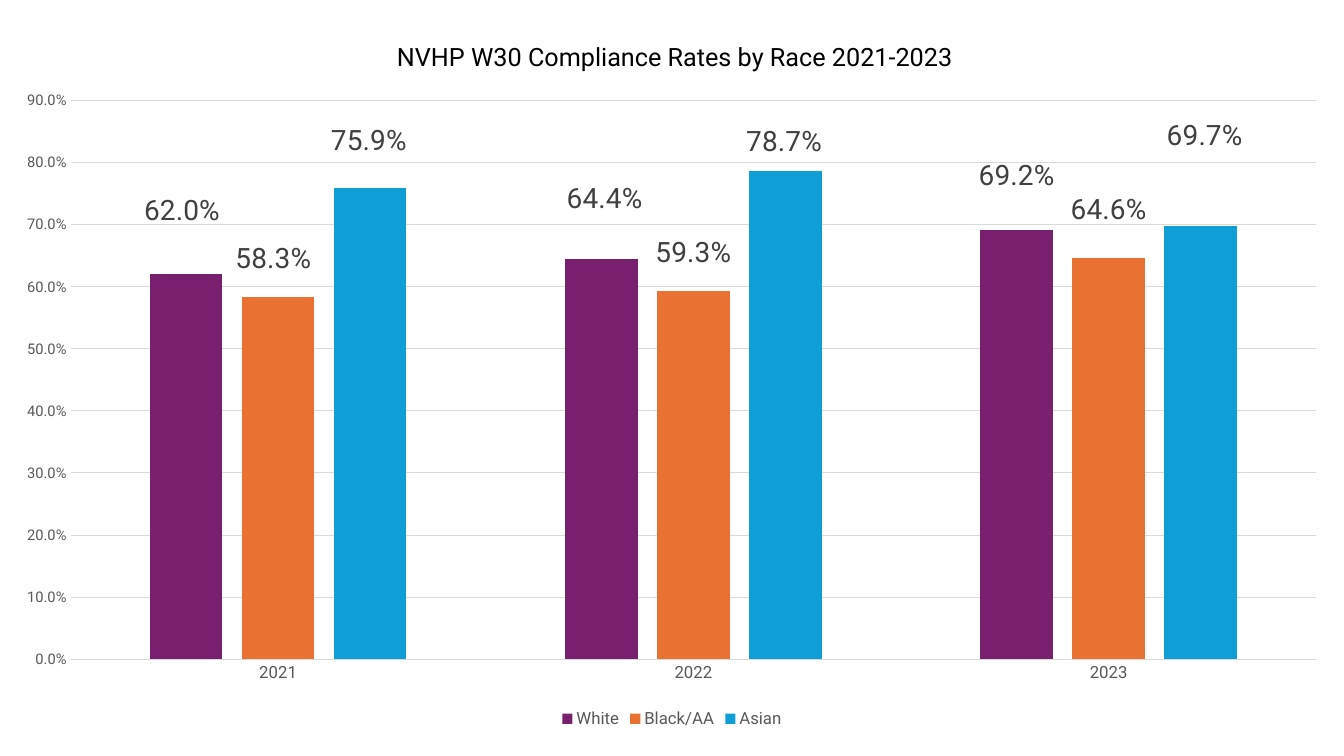
from pptx import Presentation
from pptx.chart.data import CategoryChartData
from pptx.dml.color import RGBColor
from pptx.enum.chart import (XL_CHART_TYPE, XL_LABEL_POSITION,
                             XL_LEGEND_POSITION, XL_TICK_MARK)
from pptx.oxml import parse_xml
from pptx.oxml.ns import nsdecls, qn
from pptx.util import Inches, Pt

# Content
TITLE = "NVHP W30 Compliance Rates by Race 2021-2023"
YEARS = ["2021", "2022", "2023"]
RATES = {
    "White": [0.62, 0.644, 0.692],
    "Black/AA": [0.583, 0.593, 0.646],
    "Asian": [0.759, 0.787, 0.697],
}
# Label shifts (right, down) in percent of the chart's size, one per year
LABEL_SHIFTS = {
    "White": [(-0.3, -6), (0.25, -5.6), (0, -4.6)],
    "Black/AA": [(-0.35, -2.4), (0, -2.4), (0, -3.8)],
    "Asian": [(-0.1, -3.7), (-0.1, -1.1), (0.3, -9.7)],
}
# Left, top, width, height in percent of the chart's size
PLOT_AREA = {"x": 5.25, "y": 11.4, "w": 92.7, "h": 78.3}
TITLE_AT = {"x": 29.2, "y": 2.3}

THEME = {
    "font": "Roboto",
    "series": {"White": "78206E", "Black/AA": "E97132", "Asian": "0F9ED5"},
    "grid": "D9D9D9",
    "format": "0.0%",
    "title": {"size": 18, "color": "000000", "bold": False},
    "axis": {"size": 10.5, "color": "595959"},
    "category": {"size": 12, "color": "595959"},
    "label": {"size": 20, "color": "404040"},
}


def style_font(font, role):
    values = {"name": THEME["font"], **THEME[role]}
    values["size"] = Pt(values["size"])
    font.color.rgb = RGBColor.from_string(values.pop("color"))
    for name, value in values.items():
        setattr(font, name, value)


def style_line(line):
    line.color.rgb = RGBColor.from_string(THEME["grid"])
    line.width = Pt(0.75)


def set_layout(parent, index, box, modes=""):
    """Place a chart part by hand; box holds percentages."""
    for old in parent.findall(qn("c:layout")):
        parent.remove(old)
    values = "".join(f'<c:{k} val="{v / 100:.4f}"/>' for k, v in box.items())
    parent.insert(index, parse_xml(
        f'<c:layout {nsdecls("c")}><c:manualLayout>{modes}{values}'
        '</c:manualLayout></c:layout>'))


def hide_leader_lines(labels):
    """Switch off the lines from moved labels to their columns."""
    for lines in labels.findall(qn("c:showLeaderLines")):
        lines.set("val", "0")
    labels.append(parse_xml(
        f'<c:extLst {nsdecls("c")}>'
        '<c:ext uri="{CE6537A1-D6FC-4f65-9D91-7224C49458BB}" xmlns:c15='
        '"http://schemas.microsoft.com/office/drawing/2012/chart">'
        '<c15:showLeaderLines val="0"/></c:ext></c:extLst>'))


EDGE = '<c:xMode val="edge"/><c:yMode val="edge"/>'
INNER = '<c:layoutTarget val="inner"/>' + EDGE

prs = Presentation()
prs.slide_width, prs.slide_height = Inches(13.33), Inches(7.5)
slide = prs.slides.add_slide(prs.slide_layouts[6])

# Chart
data = CategoryChartData(number_format=THEME["format"])
data.categories = YEARS
for name, rates in RATES.items():
    data.add_series(name, rates)
chart = slide.shapes.add_chart(
    XL_CHART_TYPE.COLUMN_CLUSTERED, Inches(0), Inches(0.19),
    Inches(13.33), Inches(7.08), data).chart
chart.font.name, chart.font.size = THEME["font"], Pt(10)

# Title
chart.has_title = True
tf = chart.chart_title.text_frame
tf.text = TITLE
style_font(tf.paragraphs[0].runs[0].font, "title")
set_layout(tf._txBody.getparent().getparent(), 1, TITLE_AT, EDGE)

# Legend
chart.has_legend = True
chart.legend.position = XL_LEGEND_POSITION.BOTTOM
chart.legend.include_in_layout = False
style_font(chart.legend.font, "category")

# Axes
for axis, role in ((chart.category_axis, "category"),
                   (chart.value_axis, "axis")):
    axis.major_tick_mark = axis.minor_tick_mark = XL_TICK_MARK.NONE
    style_font(axis.tick_labels.font, role)
style_line(chart.category_axis.format.line)
rate_axis = chart.value_axis
rate_axis.format.line.fill.background()
style_line(rate_axis.major_gridlines.format.line)
for name, value in {"minimum_scale": 0, "maximum_scale": 0.9,
                    "major_unit": 0.1}.items():
    setattr(rate_axis, name, value)
rate_axis.tick_labels.number_format = THEME["format"]
rate_axis.tick_labels.number_format_is_linked = False

# Columns and their labels
plot = chart.plots[0]
plot.gap_width, plot.overlap, plot.vary_by_categories = 219, -27, False
set_layout(plot._element.getparent(), 0, PLOT_AREA, INNER)
for series in plot.series:
    fill = series.format.fill
    fill.solid()
    fill.fore_color.rgb = RGBColor.from_string(THEME["series"][series.name])
    labels = series.data_labels
    for name, value in {"show_value": True, "number_format": THEME["format"],
                        "number_format_is_linked": False,
                        "position": XL_LABEL_POSITION.OUTSIDE_END}.items():
        setattr(labels, name, value)
    style_font(labels.font, "label")
    for i, (right, down) in enumerate(LABEL_SHIFTS[series.name]):
        label = series.points[i].data_label
        label.position = XL_LABEL_POSITION.OUTSIDE_END
        style_font(label.font, "label")
        set_layout(labels._element.findall(qn("c:dLbl"))[i], 1,
                   {"x": right, "y": down})
    hide_leader_lines(labels._element)

prs.save("out.pptx")
